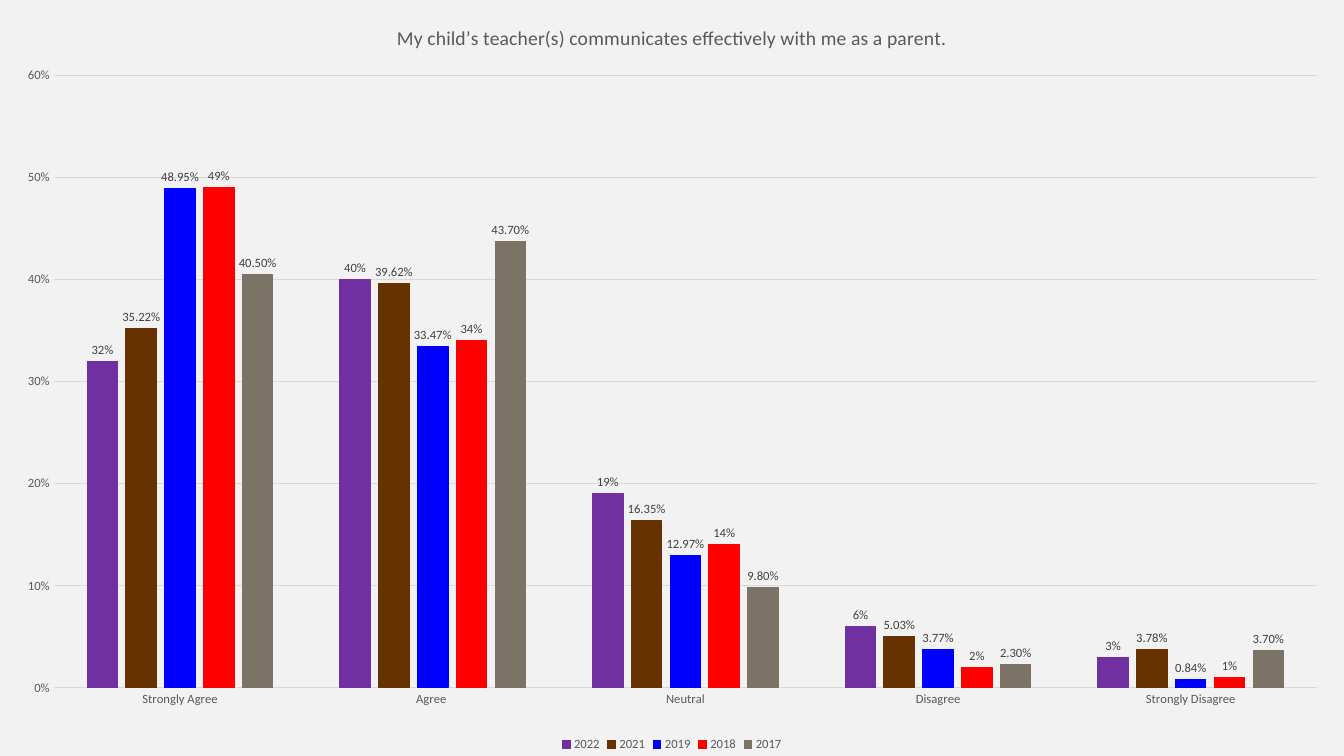
from dataclasses import dataclass

from lxml import etree
from pptx import Presentation
from pptx.chart.data import CategoryChartData
from pptx.dml.color import RGBColor
from pptx.enum.chart import XL_CHART_TYPE, XL_LABEL_POSITION, XL_LEGEND_POSITION, XL_TICK_MARK
from pptx.oxml.ns import qn
from pptx.util import Inches, Pt

COLUMNS = XL_CHART_TYPE.COLUMN_CLUSTERED
OUTSIDE_END = XL_LABEL_POSITION.OUTSIDE_END
BOTTOM = XL_LEGEND_POSITION.BOTTOM
NO_TICKS = XL_TICK_MARK.NONE


@dataclass(frozen=True)
class Theme:
    font: str = "Calibri"
    background: str = "F2F2F2"
    text: str = "595959"
    label: str = "404040"
    grid: str = "D9D9D9"
    title_size: int = 14
    text_size: int = 9
    line_width: float = 0.75


@dataclass(frozen=True)
class SurveyYear:
    name: str
    color: str
    number_format: str
    values: tuple[float, ...]


THEME = Theme()
WIDTH, HEIGHT = Inches(13.33), Inches(7.5)
TITLE = "My child’s teacher(s) communicates effectively with me as a parent."
ANSWERS = ("Strongly Agree", "Agree ", "Neutral", "Disagree", "Strongly Disagree")
YEARS = (
    SurveyYear("2022", "7030A0", "0%", (0.32, 0.4, 0.19, 0.06, 0.03)),
    SurveyYear("2021", "663300", "0.00%", (0.3522, 0.3962, 0.1635, 0.0503, 0.0378)),
    SurveyYear("2019", "0000FF", "0.00%", (0.4895, 0.3347, 0.1297, 0.0377, 0.0084)),
    SurveyYear("2018", "FF0000", "0%", (0.49, 0.34, 0.14, 0.02, 0.01)),
    SurveyYear("2017", "7B7366", "0.00%", (0.405, 0.437, 0.098, 0.023, 0.037)),
)
# Plot area as fractions of the chart
PLOT_AREA = {"x": 0.04, "y": 0.1, "w": 0.94, "h": 0.81}


def style_font(font, color: str = THEME.text, size: int = THEME.text_size) -> None:
    font.name = THEME.font
    font.size = Pt(size)
    font.bold = False
    font.color.rgb = RGBColor.from_string(color)


def style_line(line, color: str) -> None:
    line.color.rgb = RGBColor.from_string(color)
    line.width = Pt(THEME.line_width)


def place_plot_area(chart) -> None:
    """Fix the inner plot area, which python-pptx has no method for."""
    plot_area = chart.plots[0]._element.getparent()
    for old in plot_area.findall(qn("c:layout")):
        plot_area.remove(old)
    layout = etree.Element(qn("c:layout"))
    plot_area.insert(0, layout)
    manual = etree.SubElement(layout, qn("c:manualLayout"))
    settings = {"layoutTarget": "inner", "xMode": "edge", "yMode": "edge", **PLOT_AREA}
    for tag, value in settings.items():
        etree.SubElement(manual, qn(f"c:{tag}")).set("val", str(value))


def style_axes(chart) -> None:
    for axis in (chart.category_axis, chart.value_axis):
        axis.major_tick_mark = axis.minor_tick_mark = NO_TICKS
        style_font(axis.tick_labels.font)
    style_line(chart.category_axis.format.line, THEME.grid)

    percent = chart.value_axis
    percent.minimum_scale, percent.maximum_scale, percent.major_unit = 0, 0.6, 0.1
    percent.tick_labels.number_format = "0%"
    percent.tick_labels.number_format_is_linked = False
    percent.format.line.fill.background()
    style_line(percent.major_gridlines.format.line, THEME.grid)


def style_series(series, year: SurveyYear) -> None:
    series.invert_if_negative = False
    series.format.fill.solid()
    series.format.fill.fore_color.rgb = RGBColor.from_string(year.color)
    style_line(series.format.line, year.color)
    labels = series.data_labels
    labels.show_value = True
    labels.position = OUTSIDE_END
    labels.number_format = year.number_format
    labels.number_format_is_linked = False
    style_font(labels.font, THEME.label)


def add_survey_chart(s) -> None:
    data = CategoryChartData()
    data.categories = ANSWERS
    for year in YEARS:
        data.add_series(year.name, year.values, year.number_format)
    chart = s.shapes.add_chart(COLUMNS, 0, 0, WIDTH, HEIGHT, data).chart
    style_font(chart.font)

    tf = chart.chart_title.text_frame
    tf.text = TITLE
    style_font(tf.paragraphs[0].runs[0].font, size=THEME.title_size)
    chart.chart_title.include_in_layout = False

    chart.has_legend = True
    chart.legend.position = BOTTOM
    chart.legend.include_in_layout = False
    style_font(chart.legend.font)

    plot = chart.plots[0]
    plot.gap_width, plot.overlap = 219, -27
    plot.vary_by_categories = False
    for series, year in zip(plot.series, YEARS):
        style_series(series, year)
    style_axes(chart)
    place_plot_area(chart)


def main() -> None:
    prs = Presentation()
    prs.slide_width, prs.slide_height = WIDTH, HEIGHT
    s = prs.slides.add_slide(prs.slide_layouts[6])
    s.background.fill.solid()
    s.background.fill.fore_color.rgb = RGBColor.from_string(THEME.background)
    add_survey_chart(s)
    prs.save("out.pptx")


if __name__ == "__main__":
    main()
